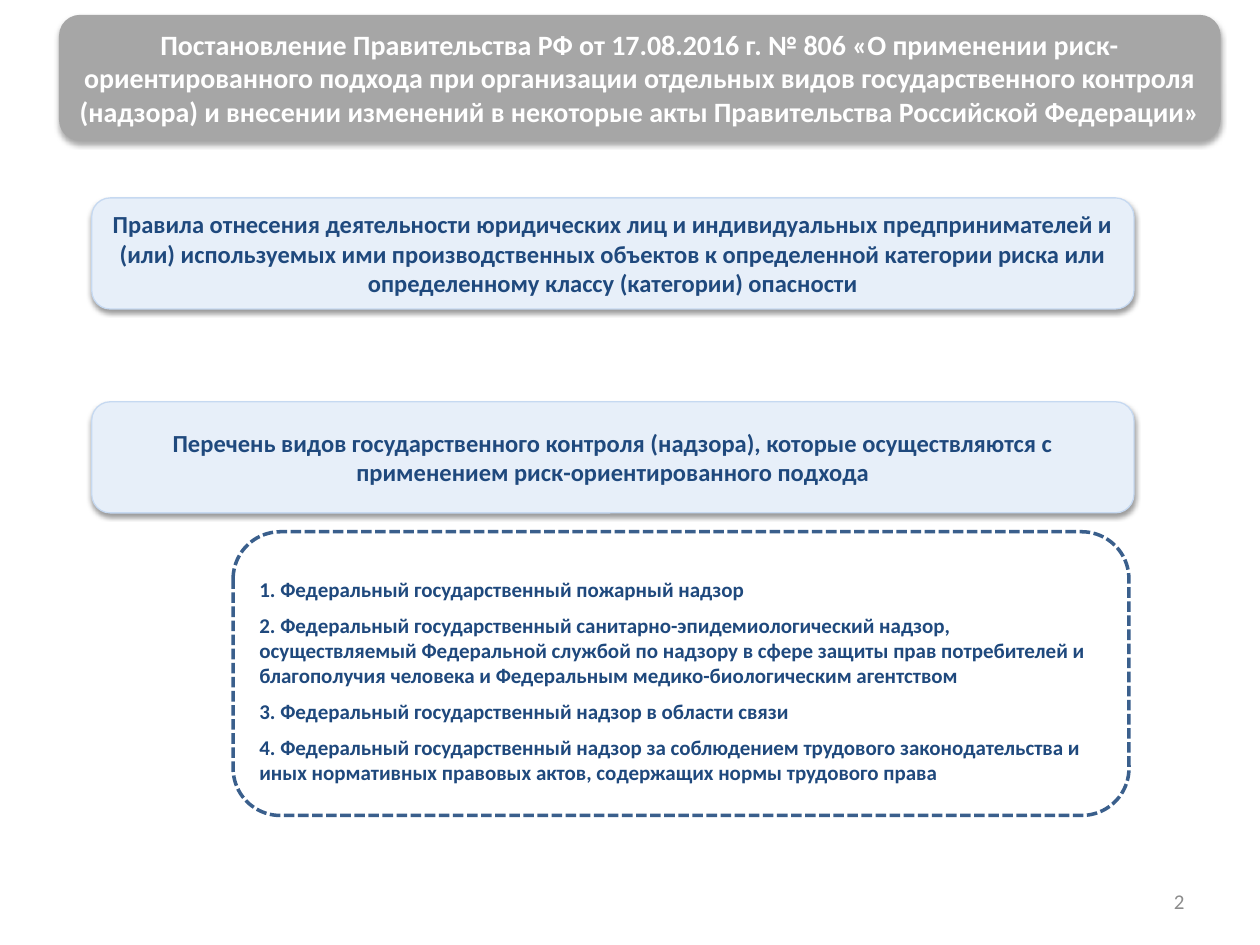
from lxml import etree
from pptx import Presentation
from pptx.dml.color import RGBColor
from pptx.enum import dml, shapes, text
from pptx.oxml.ns import qn
from pptx.util import Cm, Pt

WHITE = RGBColor(0xFF, 0xFF, 0xFF)
TITLE_GRAY = RGBColor(0xA6, 0xA6, 0xA6)
NUMBER_GRAY = RGBColor(0x8C, 0x8C, 0x8C)
PANEL_BLUE = RGBColor(0xE7, 0xEF, 0xF9)
PANEL_EDGE = RGBColor(0xC6, 0xD9, 0xF1)
DASH_BLUE = RGBColor(0x3A, 0x5F, 0x8C)
TEXT_BLUE = RGBColor(0x1F, 0x49, 0x7D)

TITLE = (
    "Постановление Правительства РФ от 17.08.2016 г. № 806 «О применении "
    "риск-ориентированного подхода при организации отдельных видов "
    "государственного контроля (надзора) и внесении изменений в некоторые "
    "акты Правительства Российской Федерации»"
)
RULES = (
    "Правила отнесения деятельности юридических лиц и индивидуальных "
    "предпринимателей и (или) используемых ими производственных объектов "
    "к определенной категории риска или определенному классу (категории) "
    "опасности"
)
CONTROL_TYPES = (
    "Перечень видов государственного контроля (надзора), которые "
    "осуществляются с применением риск-ориентированного подхода"
)
SUPERVISION = [
    "1. Федеральный государственный пожарный надзор",
    "2. Федеральный государственный санитарно-эпидемиологический надзор, "
    "осуществляемый Федеральной службой по надзору в сфере защиты прав "
    "потребителей и благополучия человека и Федеральным "
    "медико-биологическим агентством",
    "3. Федеральный государственный надзор в области связи",
    "4. Федеральный государственный надзор за соблюдением трудового "
    "законодательства и иных нормативных правовых актов, содержащих нормы "
    "трудового права",
]


def write(shape, lines, size, color, align, bold=True, gap=0):
    """Fill the shape with one paragraph per line, gap points apart."""
    frame = shape.text_frame
    frame.word_wrap = True
    frame.vertical_anchor = text.MSO_ANCHOR.MIDDLE
    frame.text = "\n".join(lines)
    for index, paragraph in enumerate(frame.paragraphs):
        paragraph.alignment = align
        paragraph.space_before = Pt(gap if index else 0)
        font = paragraph.runs[0].font
        font.name, font.size, font.bold = "Calibri", Pt(size), bold
        font.color.rgb = color


def drop_shadow(shape, distance, opacity):
    """Add a soft black shadow below; distance in points, opacity in percent."""
    effects = shape._element.spPr.find(qn("a:effectLst"))
    shadow = etree.SubElement(
        effects, qn("a:outerShdw"), blurRad=str(Pt(3.1)),
        dist=str(Pt(distance)), dir="5400000", rotWithShape="0")
    black = etree.SubElement(shadow, qn("a:srgbClr"), val="000000")
    etree.SubElement(black, qn("a:alpha"), val=str(opacity * 1000))


def rounded_box(slide, box, fill=None, edge=None, edge_width=0.75):
    shape = slide.shapes.add_shape(
        shapes.MSO_SHAPE.ROUNDED_RECTANGLE, *map(Cm, box))
    shape.shadow.inherit = False
    if fill is None:
        shape.fill.background()
    else:
        shape.fill.solid()
        shape.fill.fore_color.rgb = fill
    if edge is None:
        shape.line.fill.background()
    else:
        shape.line.color.rgb = edge
        shape.line.width = Pt(edge_width)
    return shape


def add_title(slide, box):
    banner = rounded_box(slide, box, TITLE_GRAY)
    drop_shadow(banner, 1.8, 35)
    write(banner, [TITLE], 16, WHITE, text.PP_ALIGN.CENTER)


def add_panel(slide, box, wording):
    panel = rounded_box(slide, box, PANEL_BLUE, PANEL_EDGE)
    drop_shadow(panel, 1.6, 38)
    write(panel, [wording], 14, TEXT_BLUE, text.PP_ALIGN.CENTER)


def add_supervision_list(slide, box):
    frame = rounded_box(slide, box, edge=DASH_BLUE, edge_width=2)
    frame.line.dash_style = dml.MSO_LINE.SQUARE_DOT
    frame.text_frame.margin_top = Cm(0.41)
    write(frame, SUPERVISION, 12, TEXT_BLUE, text.PP_ALIGN.LEFT, gap=6)


def add_page_number(slide, box, number):
    label = slide.shapes.add_textbox(*map(Cm, box))
    write(label, [str(number)], 12, NUMBER_GRAY, text.PP_ALIGN.RIGHT,
          bold=False)


def main():
    deck = Presentation()
    deck.slide_width, deck.slide_height = Cm(25.4), Cm(19.05)
    slide = deck.slides.add_slide(deck.slide_layouts[6])
    add_page_number(slide, (18.21, 17.65, 5.92, 1.02), 2)
    add_title(slide, (1.19, 0.3, 23.42, 2.54))
    for top, wording in ((3.99, RULES), (8.1, CONTROL_TYPES)):
        add_panel(slide, (1.85, top, 21.01, 2.24), wording)
    add_supervision_list(slide, (4.7, 10.72, 18.06, 5.72))
    deck.save("out.pptx")


if __name__ == "__main__":
    main()
